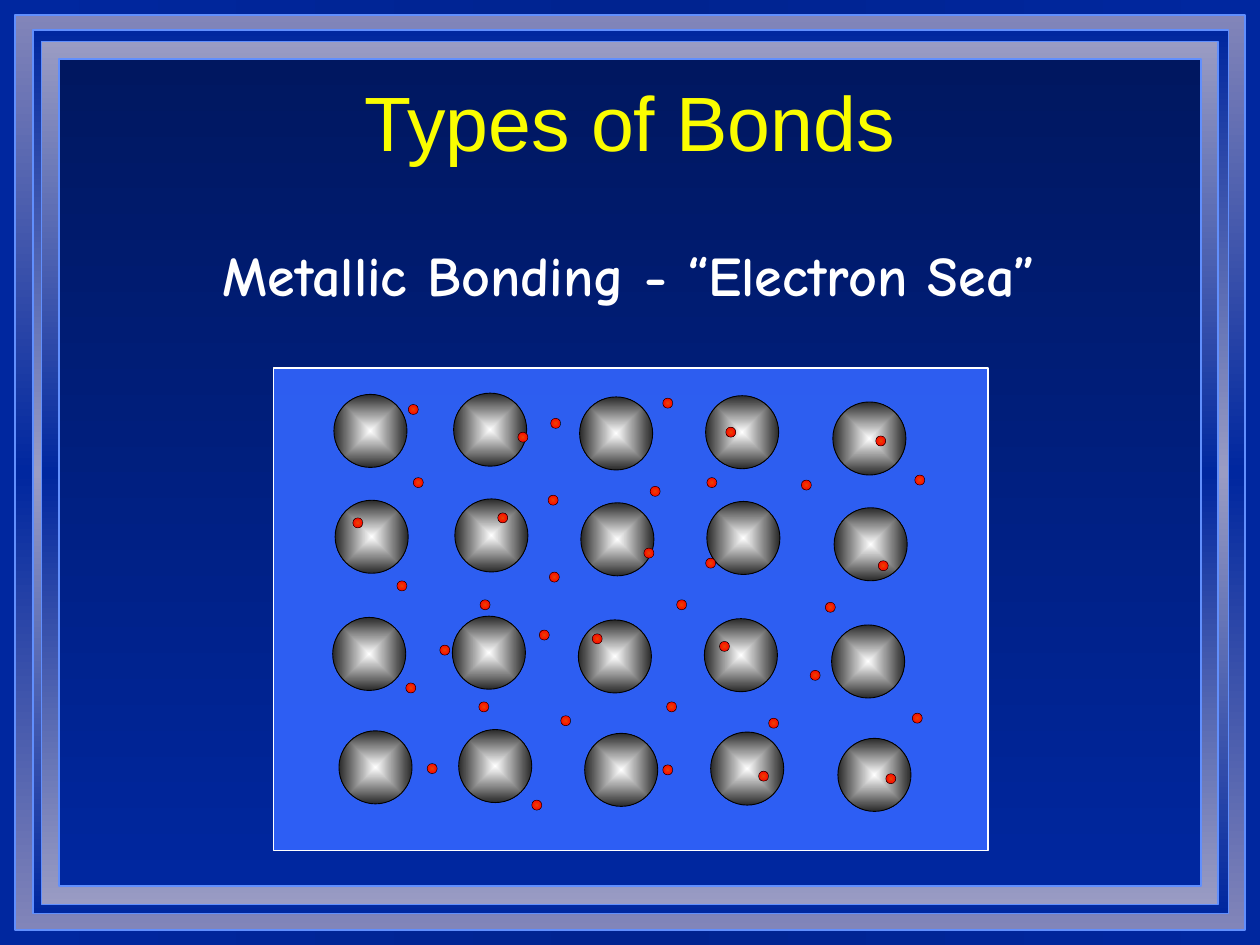
from pptx import Presentation
from pptx.dml.color import RGBColor
from pptx.enum.shapes import MSO_SHAPE as Kind
from pptx.enum.text import MSO_ANCHOR as Anchor, PP_ALIGN as Align
from pptx.oxml import parse_xml
from pptx.oxml.ns import nsdecls, qn
from pptx.util import Inches, Pt

BLUE = RGBColor(0x00, 0x27, 0x9F)
EDGE = RGBColor(0x61, 0x8F, 0xFD)
SEA = RGBColor(0x33, 0x66, 0xFF)
WHITE = RGBColor(0xFF, 0xFF, 0xFF)
BLACK = RGBColor(0x00, 0x00, 0x00)
GREY = RGBColor(0x29, 0x29, 0x29)
YELLOW = RGBColor(0xFA, 0xFD, 0x00)
ORANGE = RGBColor(0xE8, 0x44, 0x00)
RED = RGBColor(0xFF, 0x00, 0x00)

DOWN = '<a:lin ang="5400000" scaled="0"/>'
ACROSS = '<a:lin ang="0" scaled="0"/>'
CENTRE = ('<a:path path="shape"><a:fillToRect l="50000" t="50000" '
          'r="50000" b="50000"/></a:path>')


def blend(fill, root, stops, way):
    """Give fill, which lies under root, evenly spaced (colour, effect) stops."""
    fill.gradient()
    old = root.find(".//" + qn("a:gradFill"))
    step = 100000 // (len(stops) - 1)
    marks = "".join(
        f'<a:gs pos="{i * step}"><a:srgbClr val="{color}">{effect}</a:srgbClr></a:gs>'
        for i, (color, effect) in enumerate(stops))
    new = parse_xml(f'<a:gradFill {nsdecls("a")} rotWithShape="1">'
                    f'<a:gsLst>{marks}</a:gsLst>{way}</a:gradFill>')
    old.getparent().replace(old, new)


def draw(kind, box, line, width):
    shape = slide.shapes.add_shape(kind, *(Inches(v) for v in box))
    shape.shadow.inherit = False
    shape.line.color.rgb = line
    shape.line.width = Pt(width)
    return shape


deck = Presentation()
deck.slide_width, deck.slide_height = Inches(10), Inches(7.5)
slide = deck.slides.add_slide(deck.slide_layouts[5])

# Background and nested frames
plain = (BLUE, "")
dim = (BLUE, '<a:shade val="80400"/>')
dark = (BLUE, '<a:shade val="31400"/>')
soft = (BLUE, '<a:tint val="78400"/>')
pale = (BLUE, '<a:tint val="68600"/>')
blend(slide.background.fill, slide.element, [plain, dim, plain], ACROSS)
frames = [
    ((0.12, 0.12, 9.76, 7.26), [soft, plain, soft]),
    ((0.26, 0.24, 9.49, 7.01), [plain, pale, plain]),
    ((0.33, 0.33, 9.34, 6.85), [pale, plain, pale]),
    ((0.47, 0.47, 9.06, 6.56), [dark, plain]),
]
for box, stops in frames:
    frame = draw(Kind.RECTANGLE, box, EDGE, 1)
    blend(frame.fill, frame.element, stops, DOWN)

# Subtitle and title
sub = slide.shapes.add_textbox(Inches(0.28), Inches(1.65), Inches(9.43), Inches(0.9))
title = slide.shapes.title
title.left, title.top = Inches(0.75), Inches(0.54)
title.width, title.height = Inches(8.5), Inches(0.83)
title.element.getparent().append(title.element)  # in front of the frames
title.text_frame.vertical_anchor = Anchor.MIDDLE
texts = [
    (sub, "Metallic Bonding - “Electron Sea”", "Comic Neue", 32, WHITE, True),
    (title, "Types of Bonds", "Arial", 44, YELLOW, False),
]
for holder, text, face, size, color, bold in texts:
    holder.text_frame.word_wrap = True
    para = holder.text_frame.paragraphs[0]
    para.alignment = Align.CENTER
    run = para.add_run()
    run.text = text
    run.font.name, run.font.size, run.font.bold = face, Pt(size), bold
    run.font.color.rgb = color
sub.text_frame.paragraphs[0].line_spacing = 1.4

# Electron sea
sea = draw(Kind.RECTANGLE, (2.17, 2.92, 5.67, 3.83), WHITE, 1)
sea.fill.solid()
sea.fill.fore_color.rgb = SEA
tone = sea.element.spPr.find(qn("a:solidFill")).find(qn("a:srgbClr"))
tone.append(parse_xml(f'<a:alpha {nsdecls("a")} val="89000"/>'))

# Metal ions: each row is shifted sideways, each column up or down
rows = [(0, 3.13), (0.01, 3.97), (-0.01, 4.9), (0.04, 5.8)]
cols = [(2.65, 0), (3.6, -0.01), (4.6, 0.02), (5.6, 0.01), (6.61, 0.06)]
ions = [(x + dx, y + dy) for dx, y in rows for x, dy in cols]

electrons = [
    (5.6, 4.43), (5.71, 5.09), (4.7, 5.03), (5.11, 4.35), (5.37, 4.76),
    (4.45, 5.68), (5.29, 5.57), (6.1, 5.7), (3.8, 5.57), (3.81, 4.76),
    (4.36, 4.54), (4.28, 5), (4.22, 6.35), (5.26, 6.07), (6.02, 6.12),
    (7.03, 6.14), (7.24, 5.66), (6.43, 5.32), (7.26, 3.77), (6.36, 3.81),
    (5.26, 3.16), (5.61, 3.79), (6.55, 4.78), (5.16, 3.86), (3.39, 6.06),
    (3.22, 5.42), (3.49, 5.12), (3.15, 4.61), (2.8, 4.11), (3.95, 4.07),
    (3.28, 3.79), (4.11, 3.43), (3.24, 3.21), (4.35, 3.93), (4.37, 3.32),
    (5.76, 3.39), (6.95, 3.46), (6.97, 4.45),
]
balls = [
    (ions, 0.58, 0.5, [(WHITE, ""), (GREY, "")]),
    (electrons, 0.08, 0.25, [(ORANGE, ""), (RED, "")]),
]
for spots, size, width, stops in balls:
    for x, y in spots:
        ball = draw(Kind.OVAL, (x, y, size, size), BLACK, width)
        blend(ball.fill, ball.element, stops, CENTRE)

deck.save("out.pptx")
